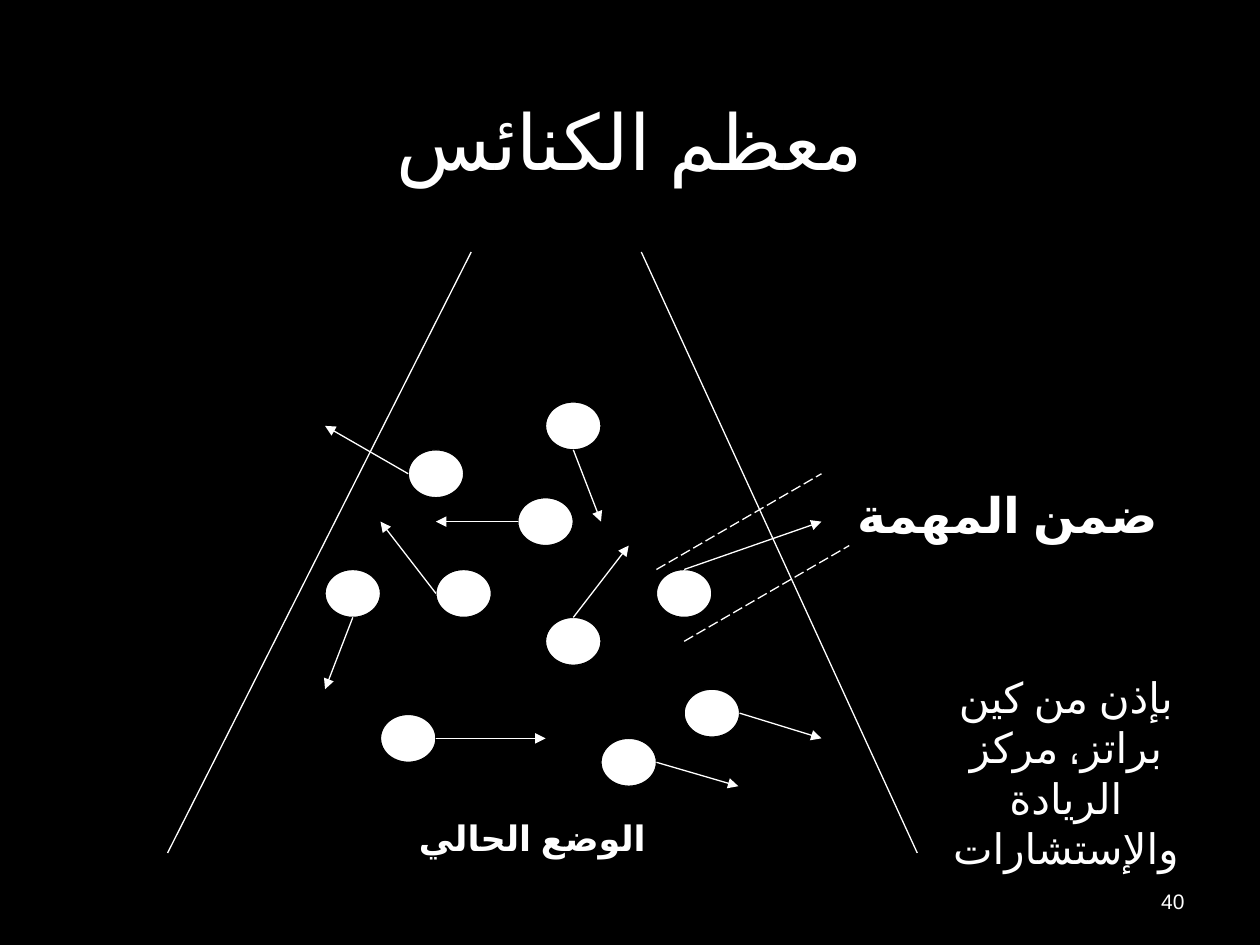
from dataclasses import dataclass

from lxml.etree import SubElement
from pptx import Presentation
from pptx.dml.color import RGBColor
from pptx.enum.dml import MSO_LINE
from pptx.enum.lang import MSO_LANGUAGE_ID
from pptx.enum.shapes import MSO_CONNECTOR, MSO_SHAPE
from pptx.enum.text import MSO_ANCHOR, PP_ALIGN
from pptx.oxml.ns import qn
from pptx.util import Inches, Pt

BLACK = RGBColor(0x00, 0x00, 0x00)
WHITE = RGBColor(0xFF, 0xFF, 0xFF)
FONT = "Arial"
LINE_WIDTH = Pt(0.75)
CIRCLE_WIDTH, CIRCLE_HEIGHT = 0.44, 0.38

# Where an arrow leaves its circle, as fractions of the circle's width and height
TOP, BOTTOM, LEFT, RIGHT = (0.5, 0), (0.5, 1), (0, 0.5), (1, 0.5)

Point = tuple[float, float]


@dataclass
class Member:
    """A circle with an arrow that leaves one side towards a target."""
    left: float
    top: float
    side: Point
    target: Point


@dataclass
class Label:
    text: str
    left: float
    top: float
    width: float
    height: float
    size: int
    align: PP_ALIGN = PP_ALIGN.CENTER
    bold: bool = False
    anchor: MSO_ANCHOR = MSO_ANCHOR.TOP


ROAD_EDGES = [((3.74, 2), (1.33, 6.77)), ((5.09, 2), (7.28, 6.77))]
MISSION_EDGES = [((5.21, 4.52), (6.52, 3.76)), ((5.43, 5.09), (6.74, 4.33))]

MEMBERS = [
    Member(3.24, 3.57, LEFT, (2.58, 3.38)),
    Member(4.11, 3.95, LEFT, (3.46, 4.14)),
    Member(4.33, 4.9, TOP, (4.99, 4.33)),
    Member(3.46, 4.52, LEFT, (3.02, 4.14)),
    Member(4.33, 3.19, BOTTOM, (4.77, 4.14)),
    Member(4.77, 5.86, RIGHT, (5.86, 6.24)),
    Member(3.02, 5.67, RIGHT, (4.33, 5.86)),
    Member(5.21, 4.52, TOP, (6.52, 4.14)),
    Member(2.58, 4.52, BOTTOM, (2.58, 5.47)),
    Member(5.43, 5.47, RIGHT, (6.52, 5.86)),
]

LABELS = [
    Label("معظم الكنائس", 0.5, 0.48, 9, 1.25, 44, anchor=MSO_ANCHOR.MIDDLE),
    Label("ضمن المهمة", 6.71, 3.8, 2.6, 0.57, 28, PP_ALIGN.LEFT, bold=True),
    Label("الوضع الحالي", 3.02, 6.43, 2.41, 0.57, 20, bold=True),
    Label("بإذن من كين براتز، مركز الريادة والإستشارات", 7.17, 5.28, 2.58, 1.31, 24),
    Label("40", 7.17, 6.95, 2.33, 0.4, 12, PP_ALIGN.RIGHT, anchor=MSO_ANCHOR.MIDDLE),
]


def add_line(slide, start: Point, end: Point, dashed: bool = False, arrow: bool = False) -> None:
    connector = slide.shapes.add_connector(
        MSO_CONNECTOR.STRAIGHT, *(Inches(value) for value in (*start, *end)))
    connector.line.color.rgb = WHITE
    connector.line.width = LINE_WIDTH
    if dashed:
        connector.line.dash_style = MSO_LINE.LONG_DASH
    if arrow:
        SubElement(connector.line._get_or_add_ln(), qn("a:tailEnd"), type="triangle")
    SubElement(connector._element.spPr, qn("a:effectLst"))


def add_member(slide, member: Member) -> None:
    circle = slide.shapes.add_shape(
        MSO_SHAPE.OVAL, Inches(member.left), Inches(member.top),
        Inches(CIRCLE_WIDTH), Inches(CIRCLE_HEIGHT))
    circle.shadow.inherit = False
    circle.fill.solid()
    circle.fill.fore_color.rgb = WHITE
    circle.line.color.rgb = BLACK
    circle.line.width = LINE_WIDTH
    across, down = member.side
    start = (member.left + across * CIRCLE_WIDTH, member.top + down * CIRCLE_HEIGHT)
    add_line(slide, start, member.target, arrow=True)


def add_label(slide, label: Label) -> None:
    box = slide.shapes.add_textbox(
        Inches(label.left), Inches(label.top), Inches(label.width), Inches(label.height))
    frame = box.text_frame
    frame.word_wrap = True
    frame.vertical_anchor = label.anchor
    paragraph = frame.paragraphs[0]
    paragraph.text = label.text
    paragraph.alignment = label.align
    font = paragraph.font
    font.name = FONT
    font.size = Pt(label.size)
    font.bold = label.bold
    font.color.rgb = WHITE
    for run in paragraph.runs:
        run.font.language_id = MSO_LANGUAGE_ID.ARABIC


def main() -> None:
    presentation = Presentation()
    presentation.slide_width = Inches(10)
    presentation.slide_height = Inches(7.5)
    slide = presentation.slides.add_slide(presentation.slide_layouts[6])
    slide.background.fill.solid()
    slide.background.fill.fore_color.rgb = BLACK

    for start, end in ROAD_EDGES:
        add_line(slide, start, end)
    for start, end in MISSION_EDGES:
        add_line(slide, start, end, dashed=True)
    for member in MEMBERS:
        add_member(slide, member)
    for label in LABELS:
        add_label(slide, label)

    presentation.save("out.pptx")


if __name__ == "__main__":
    main()
